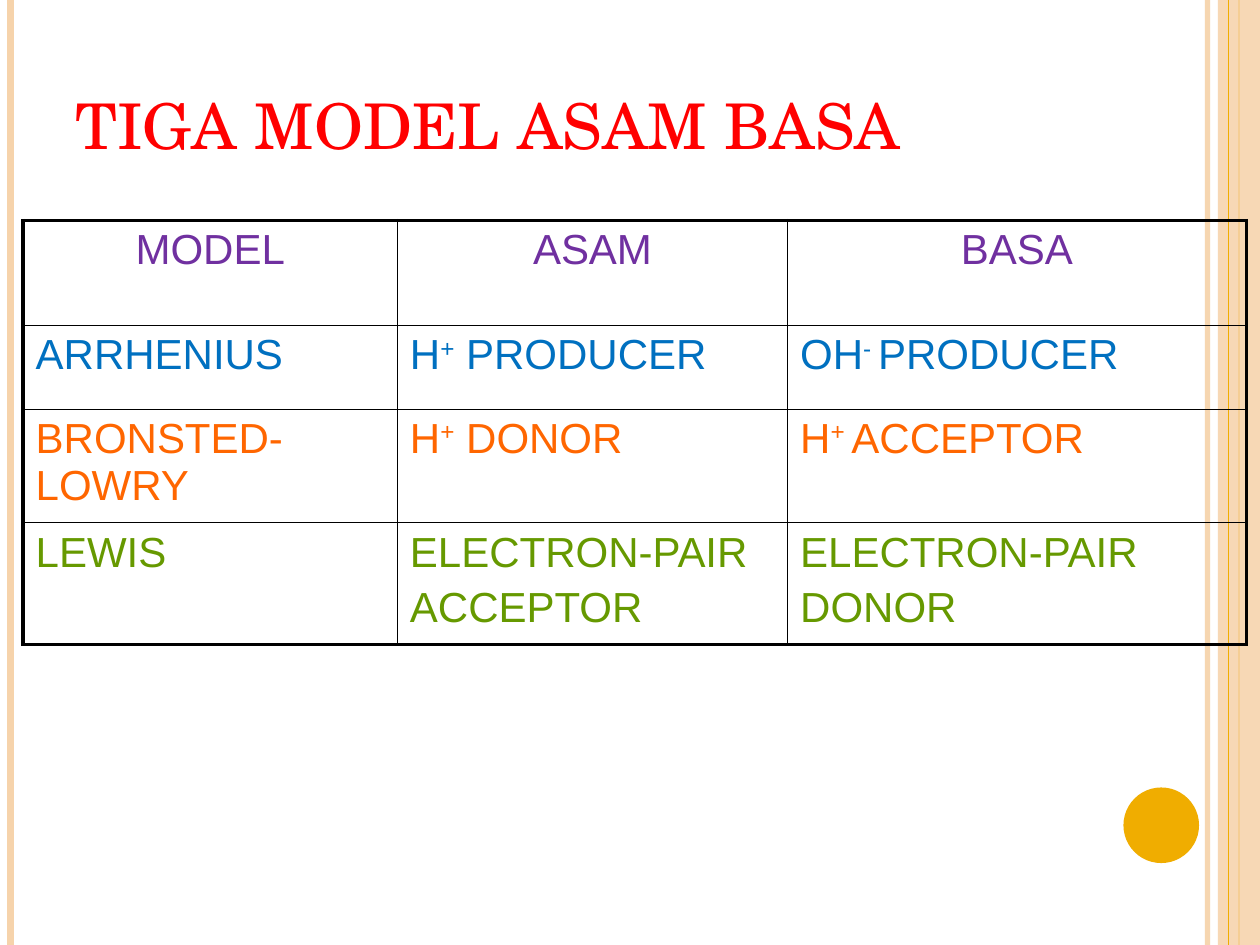
from lxml.etree import SubElement
from pptx import Presentation
from pptx.dml.color import RGBColor
from pptx.enum.shapes import MSO_CONNECTOR, MSO_SHAPE
from pptx.enum.text import MSO_ANCHOR, PP_ALIGN
from pptx.oxml.ns import qn
from pptx.util import Inches, Pt

COLUMNS, ROWS = 120, 90
PEACH, GOLD, BLACK = "F6D3AB", "F0AD00", "000000"
MODELS = [
    ("7030A0", [[["MODEL"]], [["ASAM"]], [["BASA"]]]),
    ("0070C0", [[["ARRHENIUS"]], [["H", "^+", " PRODUCER"]], [["OH", "^- ", "PRODUCER"]]]),
    ("FF6600", [[["BRONSTED-LOWRY"]], [["H", "^+", " DONOR"]], [["H", "^+ ", "ACCEPTOR"]]]),
    ("669900", [[["LEWIS"]], [["ELECTRON-PAIR"], ["ACCEPTOR"]], [["ELECTRON-PAIR"], ["DONOR"]]]),
]


def grid(units):
    return Inches(units * 10 / COLUMNS)


def rgb(value):
    return RGBColor.from_string(value)


def set_alpha(fill_parent, percent):
    tint = next(fill_parent.iter(qn("a:srgbClr")))
    SubElement(tint, qn("a:alpha"), val=str(percent * 1000))


def add_run(paragraph, words, font_name, size, color):
    run = paragraph.add_run()
    run.text = words.removeprefix("^")
    run.font.name, run.font.size = font_name, Pt(size)
    run.font.color.rgb = rgb(color)
    if words.startswith("^"):
        run._r.get_or_add_rPr().set("baseline", "30000")


def add_stripe(slide, column, top, height, color, weight, alpha=100):
    stripe = slide.shapes.add_connector(
        MSO_CONNECTOR.STRAIGHT, grid(column), grid(top), grid(column), grid(top + height))
    stripe.line.color.rgb = rgb(color)
    stripe.line.width = Pt(weight)
    SubElement(stripe._element.spPr, qn("a:effectLst"))
    if alpha < 100:
        set_alpha(stripe._element.spPr, alpha)


def add_solid(slide, kind, box, color):
    solid = slide.shapes.add_shape(kind, *map(grid, box))
    solid.shadow.inherit = False
    solid.fill.solid()
    solid.fill.fore_color.rgb = rgb(color)
    solid.line.fill.background()
    return solid


def add_frame(slide, left, top, width, height):
    right = left + width
    add_stripe(slide, right - 5, top, height, PEACH, 3, 93)
    add_stripe(slide, left + 1, top, height, PEACH, 4.5)
    add_stripe(slide, right - 2, top, height, GOLD, 1.5)
    band = add_solid(slide, MSO_SHAPE.RECTANGLE, (right - 4, top, 4, height), PEACH)
    set_alpha(band._element.spPr, 87)
    add_stripe(slide, right - 3, top, height, GOLD, 0.75)
    add_solid(slide, MSO_SHAPE.OVAL, (right - 13, top + height - 15, 7.2, 7.2), GOLD)


def add_title(slide, left, top, width, height):
    title = slide.shapes.add_textbox(*map(grid, (left, top, width, height))).text_frame
    title.word_wrap = True
    title.vertical_anchor = MSO_ANCHOR.BOTTOM
    add_run(title.paragraphs[0], "TIGA MODEL ASAM BASA", "TeX Gyre Schola", 36, "FF0000")


def add_borders(cell, outer_edges):
    properties = cell._tc.get_or_add_tcPr()
    for edge, is_outer in zip(("lnL", "lnR", "lnT", "lnB"), outer_edges):
        weight = Pt(2.25 if is_outer else 1)
        border = SubElement(properties, qn(f"a:{edge}"), w=str(weight))
        fill = SubElement(border, qn("a:solidFill"))
        SubElement(fill, qn("a:srgbClr"), val=BLACK)


def fill_cell(cell, lines, color, centred):
    for index, words in enumerate(lines):
        paragraph = cell.text_frame.paragraphs[0] if index == 0 else cell.text_frame.add_paragraph()
        paragraph.alignment = PP_ALIGN.CENTER if centred else PP_ALIGN.LEFT
        if index:
            paragraph.space_before = Pt(4.8)
        for part in words:
            add_run(paragraph, part, "Arial", 24, color)


def add_models(slide, left, top, width, height):
    column_shares, row_shares = (0.306, 0.319, 0.375), (0.256, 0.205, 0.261, 0.278)
    table = slide.shapes.add_table(
        len(row_shares), len(column_shares), *map(grid, (left, top, width, height))).table
    table.first_row = table.horz_banding = False
    for column, share in zip(table.columns, column_shares):
        column.width = grid(width * share)
    for row, share in zip(table.rows, row_shares):
        row.height = grid(height * share)
    last_row, last_column = len(row_shares) - 1, len(column_shares) - 1
    for r, (color, entries) in enumerate(MODELS):
        for c, lines in enumerate(entries):
            cell = table.cell(r, c)
            add_borders(cell, (c == 0, c == last_column, r == 0, r == last_row))
            cell.fill.background()
            fill_cell(cell, lines, color, r == 0)


def main():
    presentation = Presentation()
    presentation.slide_width, presentation.slide_height = grid(COLUMNS), grid(ROWS)
    slide = presentation.slides.add_slide(presentation.slide_layouts[6])
    add_frame(slide, 0, 0, COLUMNS, ROWS)
    add_title(slide, 6, 6, 108, 10)
    add_models(slide, 2.2, 21, 116.5, 39)
    presentation.save("out.pptx")


if __name__ == "__main__":
    main()
